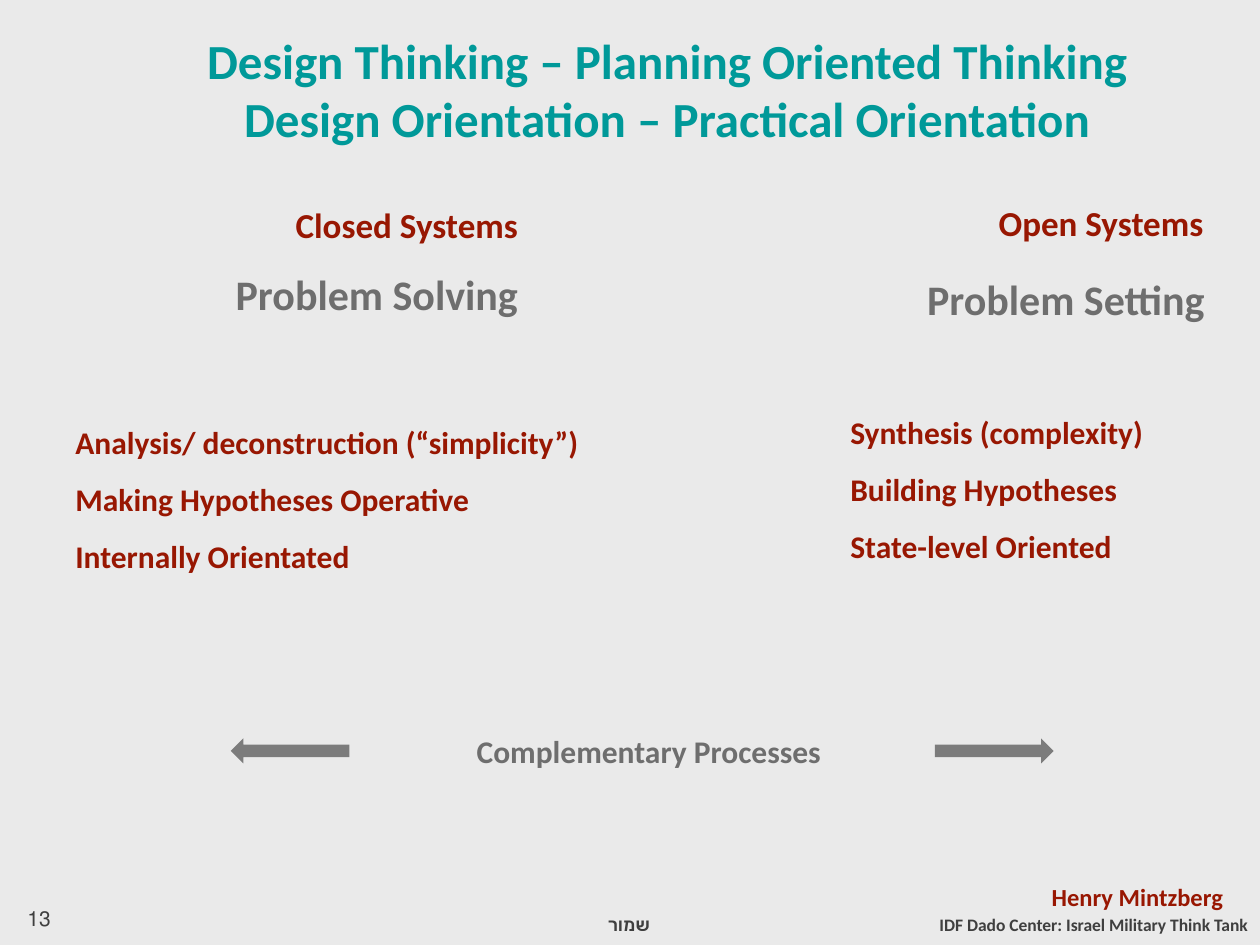
import pptx
import pptx.util
import pptx.dml.color
import pptx.enum.shapes
import pptx.enum.text

Pt = pptx.util.Pt
RGB = pptx.dml.color.RGBColor
ALIGN = pptx.enum.text.PP_ALIGN
SHAPE = pptx.enum.shapes.MSO_SHAPE

BACKGROUND = RGB(0xEA, 0xEA, 0xEA)
TEAL = RGB(0x00, 0x99, 0x99)
RED = RGB(0x98, 0x17, 0x02)
GRAY = RGB(0x6E, 0x6E, 0x6E)
DARK = RGB(0x3F, 0x3F, 0x3F)
ARROW = RGB(0x7C, 0x7C, 0x7C)

FONT = "Calibri"
LEFT, CENTER, RIGHT = ALIGN.LEFT, ALIGN.CENTER, ALIGN.RIGHT

TITLE = ["Design Thinking – Planning Oriented Thinking ",
         "Design Orientation – Practical Orientation "]
CLOSED_TRAITS = ["Analysis/ deconstruction (“simplicity”)",
                 "Making Hypotheses Operative",
                 "Internally Orientated"]
OPEN_TRAITS = ["Synthesis (complexity)", "Building Hypotheses", "State-level Oriented"]

# lines, (left, top, width, height), size, colour, alignment, options
TEXTS = [
    (["13"], (8.6, 514, 168, 29), 12, DARK, LEFT, {"bold": False}),
    (["שמור"], (280, 519, 98.6, 29), 10, DARK, RIGHT, {}),
    ([" Henry Mintzberg"], (468.7, 500.4, 241.2, 24.5), 14, RED, RIGHT, {}),
    (["Problem Setting"], (468.7, 152.6, 226.8, 36), 24, GRAY, RIGHT, {}),
    (["Problem Solving"], (76.3, 149.8, 226.8, 36), 24, GRAY, RIGHT, {}),
    (["Complementary Processes "], (211, 414.7, 314.6, 29), 18, GRAY, CENTER, {}),
    (["Open Systems"], (371.5, 99.4, 323.3, 44), 20, RED, RIGHT, {"spacing": 1.5}),
    (["Closed Systems"], (53.3, 100.8, 249.8, 39.6), 20, RED, RIGHT, {"spacing": 1.5}),
    (["IDF Dado Center: Israel Military Think Tank"],
     (483.8, 516.2, 236.2, 29), 10, DARK, RIGHT, {"inset": 7.2}),
    (TITLE, (53.3, 13.7, 648, 84.2), 28, TEAL, CENTER, {}),
    (CLOSED_TRAITS, (36, 227.5, 355.7, 138.2), 18, RED, LEFT,
     {"spacing": 1.5, "rtl": False}),
    (OPEN_TRAITS, (478.8, 221.8, 241.2, 138.2), 18, RED, LEFT,
     {"spacing": 1.5, "rtl": False}),
]
ARROWS = [(SHAPE.RIGHT_ARROW, 534.2), (SHAPE.LEFT_ARROW, 131.8)]
ARROW_TOP, ARROW_WIDTH, ARROW_HEIGHT = 421.9, 67.9, 14.4


def add_text(s, lines, box, size, color, align,
             bold=True, rtl=True, spacing=1.0, inset=3.6):
    tf = s.shapes.add_textbox(*map(Pt, box)).text_frame
    tf.word_wrap = True
    tf.margin_left = tf.margin_right = Pt(7.2)
    tf.margin_top = tf.margin_bottom = Pt(inset)
    for i, line in enumerate(lines):
        p = tf.add_paragraph() if i else tf.paragraphs[0]
        p.alignment = align
        p.line_spacing = spacing
        if rtl:
            p._p.get_or_add_pPr().set("rtl", "1")
        r = p.add_run()
        r.text = line
        r.font.name = FONT
        r.font.size = Pt(size)
        r.font.bold = bold
        r.font.color.rgb = color


def add_arrow(s, kind, left):
    sp = s.shapes.add_shape(kind, Pt(left), Pt(ARROW_TOP), Pt(ARROW_WIDTH), Pt(ARROW_HEIGHT))
    sp.shadow.inherit = False
    sp.fill.solid()
    sp.fill.fore_color.rgb = ARROW
    sp.line.fill.background()


def main():
    prs = pptx.Presentation()
    prs.slide_width, prs.slide_height = Pt(720), Pt(540)
    s = prs.slides.add_slide(prs.slide_layouts[6])
    s.background.fill.solid()
    s.background.fill.fore_color.rgb = BACKGROUND
    for lines, box, size, color, align, options in TEXTS:
        add_text(s, lines, box, size, color, align, **options)
    for kind, left in ARROWS:
        add_arrow(s, kind, left)
    prs.save("out.pptx")


if __name__ == "__main__":
    main()
